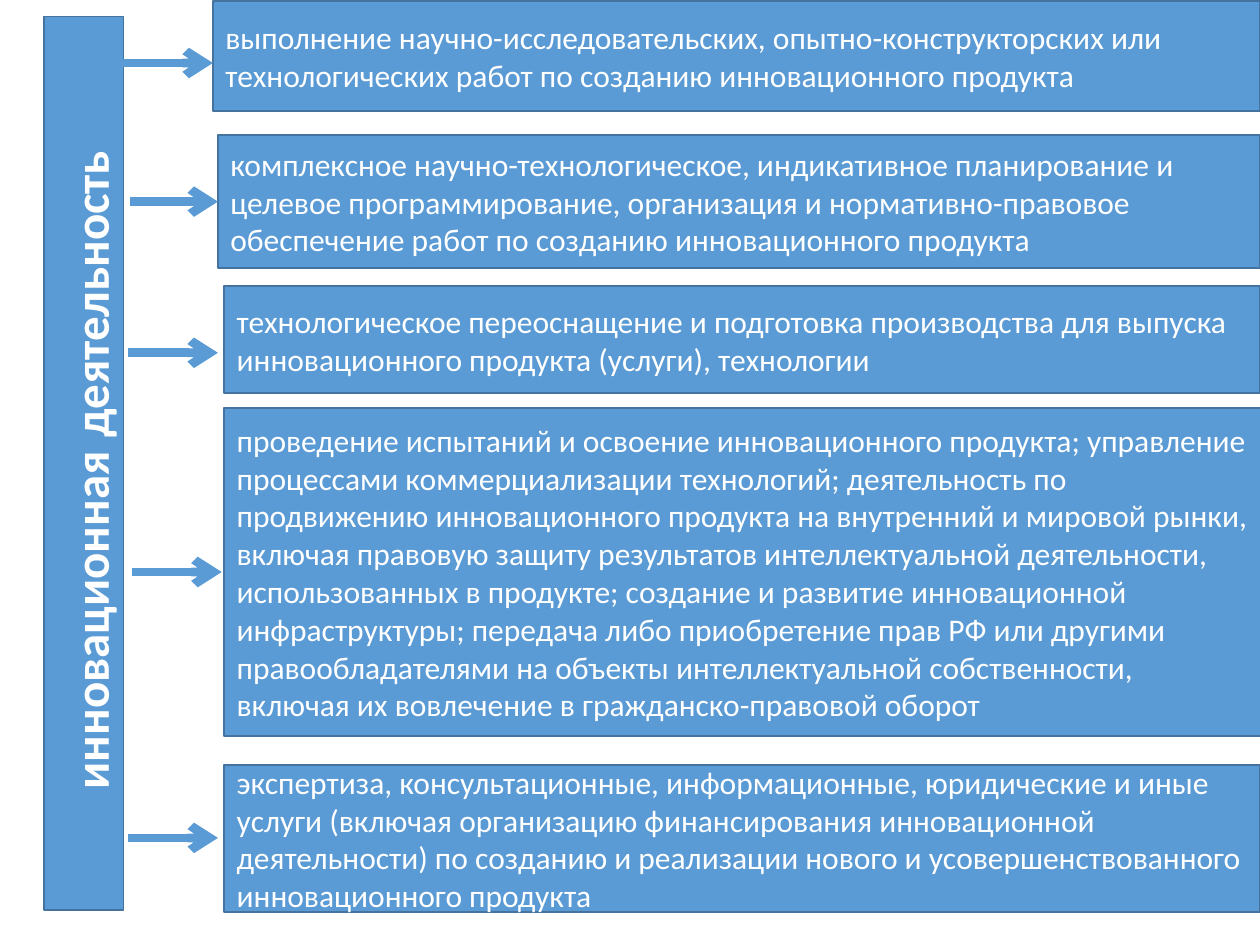
"""Build a slide that lists the kinds of innovation activity."""
from dataclasses import dataclass

import pptx
import pptx.dml.color
import pptx.enum.shapes
import pptx.enum.text
import pptx.oxml
import pptx.oxml.ns
import pptx.util

WIDE, HIGH = pptx.util.Inches(10), pptx.util.Inches(7.5)
COLS, ROWS = 100, 75
BLUE, EDGE, WHITE = "5B9BD5", "43739E", "FFFFFF"
FONT = "Calibri"
REACH = 7.1


@dataclass
class Box:
    """A rectangle in grid columns and rows."""
    left: float
    top: float
    width: float
    height: float


@dataclass
class Item:
    """One activity with the start of its arrow."""
    box: Box
    start: float
    row: float
    text: str
    joined: bool = False


BAR = Box(3.5, 1.3, 6.3, 70.9)
TITLE = [("инновационная", 28), (" ", 36), ("деятельность", 28), (" ", 36)]
ITEMS = [
    Item(Box(16.9, 0.1, 83.1, 8.7), 9.8, 5,
         "выполнение научно-исследовательских, опытно-конструкторских или "
         "технологических работ по созданию инновационного продукта"),
    Item(Box(17.3, 10.7, 82.7, 10.6), 10.3, 16,
         "комплексное научно-технологическое, индикативное планирование и "
         "целевое программирование, организация и нормативно-правовое "
         "обеспечение работ по созданию инновационного продукта", True),
    Item(Box(17.8, 22.7, 82.2, 8.5), 10.2, 28,
         "технологическое переоснащение и подготовка производства для выпуска "
         "инновационного продукта (услуги), технологии"),
    Item(Box(17.8, 32.4, 82.6, 26), 10.5, 45.4,
         "проведение испытаний и освоение инновационного продукта; управление "
         "процессами коммерциализации технологий; деятельность по "
         "продвижению инновационного продукта на внутренний и мировой рынки, "
         "включая правовую защиту результатов интеллектуальной деятельности, "
         "использованных в продукте; создание и развитие инновационной "
         "инфраструктуры; передача либо приобретение прав РФ или другими "
         "правообладателями на объекты интеллектуальной собственности, "
         "включая их вовлечение в гражданско-правовой оборот"),
    Item(Box(17.8, 60.7, 82.2, 11.7), 10.2, 66.5,
         "экспертиза, консультационные, информационные, юридические и иные "
         "услуги (включая организацию финансирования инновационной "
         "деятельности) по созданию и реализации нового и усовершенствованного "
         "инновационного продукта"),
]


def across(cols: float) -> int:
    """Turn grid columns into a length."""
    return round(WIDE * cols / COLS)


def down(rows: float) -> int:
    """Turn grid rows into a length."""
    return round(HIGH * rows / ROWS)


def paint(form, tint: str) -> None:
    """Give a fill, line or font a plain colour."""
    if hasattr(form, "solid"):
        form.solid()
        form.fore_color.rgb = pptx.dml.color.RGBColor.from_string(tint)
    else:
        form.color.rgb = pptx.dml.color.RGBColor.from_string(tint)


def style(run, size: float, bold: bool = False) -> None:
    """Set the font of a run."""
    run.font.name = FONT
    run.font.size = pptx.util.Pt(size)
    run.font.bold = bold
    paint(run.font, WHITE)


def draw_box(slide, box: Box):
    """Draw a bordered blue rectangle."""
    shape = slide.shapes.add_shape(
        pptx.enum.shapes.MSO_SHAPE.RECTANGLE, across(box.left), down(box.top),
        across(box.width), down(box.height))
    shape.shadow.inherit = False
    paint(shape.fill, BLUE)
    paint(shape.line, EDGE)
    shape.line.width = pptx.util.Pt(1)
    frame = shape.text_frame
    frame.word_wrap = True
    frame.vertical_anchor = pptx.enum.text.MSO_ANCHOR.MIDDLE
    return shape


def draw_bar(slide) -> None:
    """Draw the upright title bar."""
    frame = draw_box(slide, BAR).text_frame
    frame._txBody.bodyPr.set("vert", "vert270")
    para = frame.paragraphs[0]
    para.alignment = pptx.enum.text.PP_ALIGN.CENTER
    for text, size in TITLE:
        run = para.add_run()
        run.text = text
        style(run, size, True)


def draw_arrow(slide, item: Item, shape) -> None:
    """Draw the arrow that leads to an item."""
    line = slide.shapes.add_connector(
        pptx.enum.shapes.MSO_CONNECTOR.STRAIGHT, across(item.start),
        down(item.row), across(item.start + REACH), down(item.row))
    if item.joined:
        line.end_connect(shape, 1)
    paint(line.line, BLUE)
    line.line.width = pptx.util.Pt(5)
    space = pptx.oxml.ns.nsdecls("a")
    line.line._get_or_add_ln().append(
        pptx.oxml.parse_xml(f'<a:tailEnd {space} type="arrow"/>'))
    line._element.spPr.append(pptx.oxml.parse_xml(f"<a:effectLst {space}/>"))


def draw_item(slide, item: Item) -> None:
    """Draw an activity and its arrow."""
    shape = draw_box(slide, item.box)
    shape.text_frame.text = item.text
    para = shape.text_frame.paragraphs[0]
    para.alignment = pptx.enum.text.PP_ALIGN.LEFT
    style(para.runs[0], 18)
    draw_arrow(slide, item, shape)


def main() -> None:
    """Build and save the deck."""
    deck = pptx.Presentation()
    deck.slide_width, deck.slide_height = WIDE, HIGH
    slide = deck.slides.add_slide(deck.slide_layouts[6])
    draw_bar(slide)
    for item in ITEMS:
        draw_item(slide, item)
    deck.save("out.pptx")


if __name__ == "__main__":
    main()
